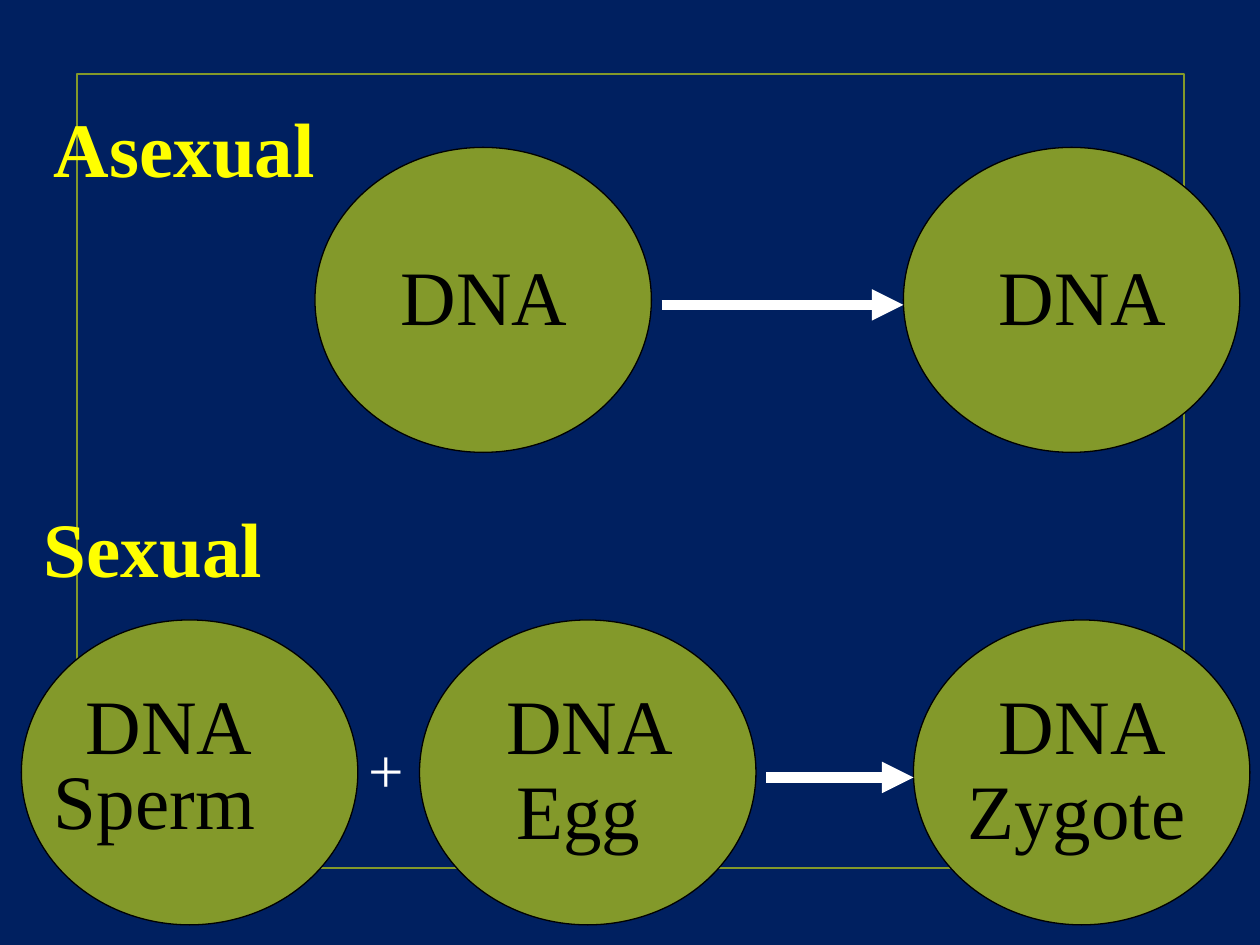
from lxml import etree
from pptx import Presentation
from pptx.dml.color import RGBColor
from pptx.enum import shapes, text
from pptx.oxml.ns import qn
from pptx.util import Inches, Pt

COLORS = {"background": "002060", "olive": "83992A", "heading": "FFFF00",
          "white": "FFFFFF", "black": "000000"}
FONT = "Times New Roman"
CELL_WIDTH, CELL_HEIGHT = 2.67, 2.42
ASEXUAL_TOP, SEXUAL_TOP = 1.17, 4.92


def color(name):
    return RGBColor.from_string(COLORS[name])


def add_frame(slide):
    frame = slide.shapes.add_shape(shapes.MSO_SHAPE.RECTANGLE, Inches(0.61), Inches(0.59),
                                   Inches(8.79), Inches(6.3))
    frame.shadow.inherit = False
    frame.fill.background()
    frame.line.color.rgb = color("olive")
    frame.line.width = Pt(1.25)


def add_cell(slide, left, top):
    cell = slide.shapes.add_shape(shapes.MSO_SHAPE.OVAL, Inches(left), Inches(top),
                                  Inches(CELL_WIDTH), Inches(CELL_HEIGHT))
    cell.shadow.inherit = False
    cell.fill.solid()
    cell.fill.fore_color.rgb = color("olive")
    cell.line.color.rgb = color("black")
    cell.line.width = Pt(0.75)


def add_arrow(slide, start, end, y):
    arrow = slide.shapes.add_connector(shapes.MSO_CONNECTOR.STRAIGHT, Inches(start), Inches(y),
                                       Inches(end), Inches(y))
    arrow.line.color.rgb = color("white")
    arrow.line.width = Pt(6)
    etree.SubElement(arrow.line._get_or_add_ln(), qn("a:tailEnd"), type="triangle")
    etree.SubElement(arrow._element.spPr, qn("a:effectLst"))


def add_label(slide, wording, left, top, width, height=0.83, size=44, ink="black", bold=False):
    label = slide.shapes.add_textbox(Inches(left), Inches(top), Inches(width), Inches(height))
    frame = label.text_frame
    frame.word_wrap = True
    frame.auto_size = text.MSO_AUTO_SIZE.SHAPE_TO_FIT_TEXT
    run = frame.paragraphs[0].add_run()
    run.text = wording
    run.font.name = FONT
    run.font.size = Pt(size)
    run.font.bold = bold
    run.font.color.rgb = color(ink)


def main():
    deck = Presentation()
    deck.slide_width, deck.slide_height = Inches(10), Inches(7.5)
    slide = deck.slides.add_slide(deck.slide_layouts[6])
    slide.background.fill.solid()
    slide.background.fill.fore_color.rgb = color("background")

    add_frame(slide)
    for left, top in [(7.17, ASEXUAL_TOP), (2.5, ASEXUAL_TOP),
                      (7.25, SEXUAL_TOP), (3.33, SEXUAL_TOP), (0.17, SEXUAL_TOP)]:
        add_cell(slide, left, top)

    add_label(slide, "Asexual", 0.33, 0.75, 5.34, ink="heading", bold=True)
    add_label(slide, "Sexual", 0.25, 3.92, 4.53, ink="heading", bold=True)
    add_arrow(slide, 5.25, 7.17, 2.42)
    add_arrow(slide, 6.08, 7.25, 6.17)
    add_label(slide, "+", 2.83, 5.75, 1.33, height=0.7, size=36, ink="white")

    for left, top, width in [(0.58, 5.33, 2.67), (3.92, 5.33, 2.67), (7.83, 5.33, 1.75),
                             (3.08, 1.92, 2.67), (7.83, 1.92, 1.92)]:
        add_label(slide, "DNA", left, top, width)
    for name, left, top, width in [("Sperm", 0.33, 5.92, 2), ("Egg", 4, 6, 1.29),
                                   ("Zygote", 7.58, 6, 2.07)]:
        add_label(slide, name, left, top, width)

    deck.save("out.pptx")


if __name__ == "__main__":
    main()
